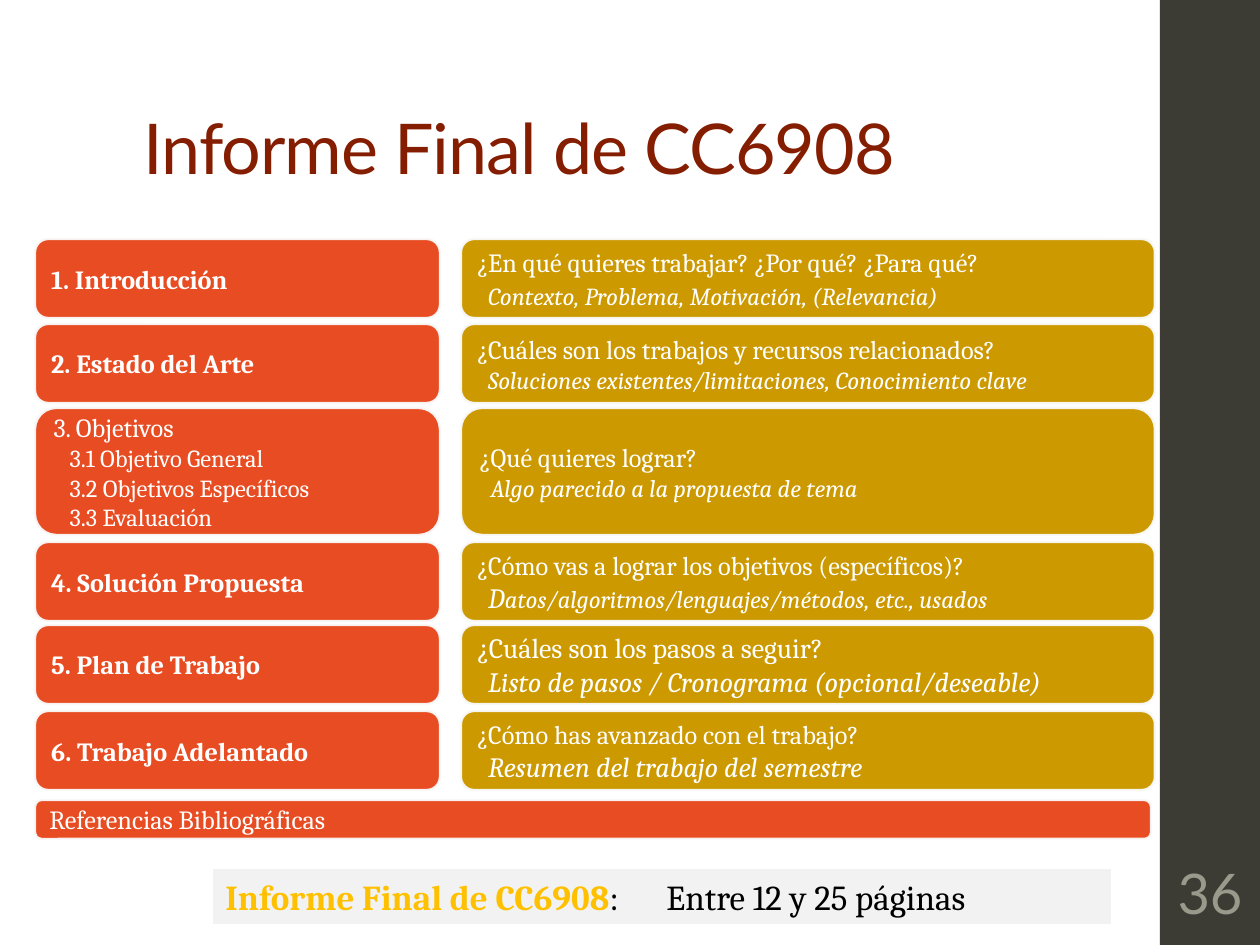
"""Build the slide that outlines the CC6908 final report, section by section."""
from dataclasses import dataclass, field
from typing import Any

from lxml.etree import SubElement
from pptx import Presentation
from pptx.dml.color import RGBColor
from pptx.enum.shapes import MSO_SHAPE
from pptx.enum.text import MSO_ANCHOR, PP_ALIGN
from pptx.oxml.ns import qn
from pptx.util import Pt

EMU_PER_PX = 914400 / 126
COLORS = {
    "bar": "3C3C34", "title": "851D00", "number": "9A9A8C", "section": "E84C22",
    "detail": "CC9900", "outline": "F9F9F9", "text": "FFFFFF",
    "footer": "F2F2F2", "accent": "FFC000", "black": "000000",
}
BODY = {"name": "Cambria", "size": Pt(15), "bold": False, "italic": False}
HEADING = BODY | {"bold": True}
SUBITEM = BODY | {"size": Pt(14)}
HINT = SUBITEM | {"italic": True}
LARGE = BODY | {"size": Pt(16)}
LARGE_HINT = LARGE | {"italic": True}
FOOTER = BODY | {"size": Pt(20)}
FOOTER_LABEL = FOOTER | {"bold": True}
TITLE = {"name": "Lato", "size": Pt(40)}
NUMBER = {"name": "Lato", "size": Pt(32)}
SECTION_LEFT, SECTION_WIDTH = 35, 405
DETAIL_LEFT, DETAIL_WIDTH = 461, 694
HINT_INDENT, SUBITEM_INDENT = 11, 16


@dataclass(frozen=True)
class Span:
    text: str
    style: dict[str, Any]
    color: str = "text"


@dataclass(frozen=True)
class Line:
    spans: list[Span]
    indent: int = 0
    format: dict[str, Any] = field(default_factory=dict)


@dataclass(frozen=True)
class Box:
    left: int
    top: int
    width: int
    height: int


@dataclass(frozen=True)
class Row:
    top: int
    section: list[Line]
    detail: list[Line]
    height: int = 79


def px(length: int) -> int:
    """Turn pixels into EMU."""
    return round(length * EMU_PER_PX)


def rgb(name: str) -> RGBColor:
    """Look up a named colour."""
    return RGBColor.from_string(COLORS[name])


def line(text: str, style: dict[str, Any], indent: int = 0) -> Line:
    """Make a line with a single span."""
    return Line([Span(text, style)], indent)


def hint(text: str, style: dict[str, Any] = HINT) -> Line:
    """Make an indented italic line."""
    return line(text, style, HINT_INDENT)


def write(shape: Any, lines: list[Line], **frame_format: Any) -> None:
    """Fill a shape with formatted lines."""
    frame = shape.text_frame
    for key, value in ({"word_wrap": True, "vertical_anchor": MSO_ANCHOR.MIDDLE} | frame_format).items():
        setattr(frame, key, value)
    for index, content in enumerate(lines):
        paragraph = frame.paragraphs[0] if index == 0 else frame.add_paragraph()
        for key, value in ({"alignment": PP_ALIGN.LEFT} | content.format).items():
            setattr(paragraph, key, value)
        if content.indent:
            paragraph._p.get_or_add_pPr().set("marL", str(px(content.indent)))
        for span in content.spans:
            run = paragraph.add_run()
            run.text = span.text
            for key, value in span.style.items():
                setattr(run.font, key, value)
            run.font.color.rgb = rgb(span.color)


def add_block(slide: Any, box: Box, fill: str, preset: MSO_SHAPE = MSO_SHAPE.RECTANGLE) -> Any:
    """Draw a filled block without a line or shadow."""
    block = slide.shapes.add_shape(preset, px(box.left), px(box.top), px(box.width), px(box.height))
    block.shadow.inherit = False
    block.fill.solid()
    block.fill.fore_color.rgb = rgb(fill)
    block.line.fill.background()
    return block


def add_card(slide: Any, box: Box, fill: str, lines: list[Line]) -> None:
    """Draw a rounded card with a translucent outline and text."""
    card = add_block(slide, box, fill, MSO_SHAPE.ROUNDED_RECTANGLE)
    card.line.color.rgb = rgb("outline")
    card.line.width = Pt(1.35)
    outline_color = card.line._get_or_add_ln().find(".//" + qn("a:srgbClr"))
    SubElement(outline_color, qn("a:alpha"), val="95000")
    write(card, lines)


def add_label(slide: Any, box: Box, content: Line, **frame_format: Any) -> Any:
    """Add a text box that holds one line."""
    label = slide.shapes.add_textbox(px(box.left), px(box.top), px(box.width), px(box.height))
    write(label, [content], **frame_format)
    return label


ROWS = [
    Row(239, [line("1. Introducción", HEADING)],
        [line("¿En qué quieres trabajar? ¿Por qué? ¿Para qué?", BODY),
         Line([Span("Contexto, Problema, Motivación, (Relevancia)", HINT)], HINT_INDENT,
              {"line_spacing": 1.1})]),
    Row(324, [line("2. Estado del Arte", HEADING)],
        [line("¿Cuáles son los trabajos y recursos relacionados?", BODY),
         hint("Soluciones existentes/limitaciones, Conocimiento clave")]),
    Row(408, [line("3. Objetivos", BODY)]
        + [line(goal, SUBITEM, SUBITEM_INDENT) for goal in
           ("3.1 Objetivo General", "3.2 Objetivos Específicos", "3.3 Evaluación")],
        [line("¿Qué quieres lograr?", BODY), hint("Algo parecido a la propuesta de tema")], 127),
    Row(542, [line("4. Solución Propuesta", HEADING)],
        [line("¿Cómo vas a lograr los objetivos (específicos)?", BODY),
         Line([Span("D", LARGE_HINT),
               Span("atos/algoritmos/lenguajes/métodos, etc., usados", HINT)], HINT_INDENT)]),
    Row(625, [line("5. Plan de Trabajo", HEADING)],
        [line("¿Cuáles son los pasos a seguir?", LARGE),
         hint("Listo de pasos / Cronograma (opcional/deseable)", LARGE_HINT)]),
    Row(711, [line("6. Trabajo Adelantado", HEADING)],
        [line("¿Cómo has avanzado con el trabajo?", BODY),
         hint("Resumen del trabajo del semestre", LARGE_HINT)]),
]


def main() -> None:
    """Build and save the slide."""
    deck = Presentation()
    deck.slide_width, deck.slide_height = px(1260), px(945)
    slide = deck.slides.add_slide(deck.slide_layouts[6])

    add_block(slide, Box(1160, 0, 100, 945), "bar")
    title = add_label(slide, Box(131, 13, 1002, 183),
                      Line([Span("Informe Final de CC6908", TITLE, "title")],
                           format={"line_spacing": 0.9}),
                      vertical_anchor=MSO_ANCHOR.BOTTOM)
    title.text_frame.paragraphs[0].runs[0].font._element.set("spc", "-50")
    add_label(slide, Box(1163, 851, 94, 82),
              Line([Span("36", NUMBER, "number")], format={"alignment": PP_ALIGN.CENTER}),
              margin_left=px(4), margin_right=px(4))

    for row in ROWS:
        add_card(slide, Box(SECTION_LEFT, row.top, SECTION_WIDTH, row.height), "section", row.section)
        add_card(slide, Box(DETAIL_LEFT, row.top, DETAIL_WIDTH, row.height), "detail", row.detail)
    add_card(slide, Box(SECTION_LEFT, 800, 1116, 39), "section",
             [line("Referencias Bibliográficas", BODY)])

    footer = add_block(slide, Box(213, 869, 898, 55), "footer")
    write(footer, [Line([Span("Informe Final de CC6908", FOOTER_LABEL, "accent"),
                         Span(":\tEntre 12 y 25 páginas", FOOTER, "black")])])
    tab_stops = SubElement(footer.text_frame.paragraphs[0]._p.get_or_add_pPr(), qn("a:tabLst"))
    SubElement(tab_stops, qn("a:tab"), pos=str(px(441)), algn="l")

    deck.save("out.pptx")


if __name__ == "__main__":
    main()
